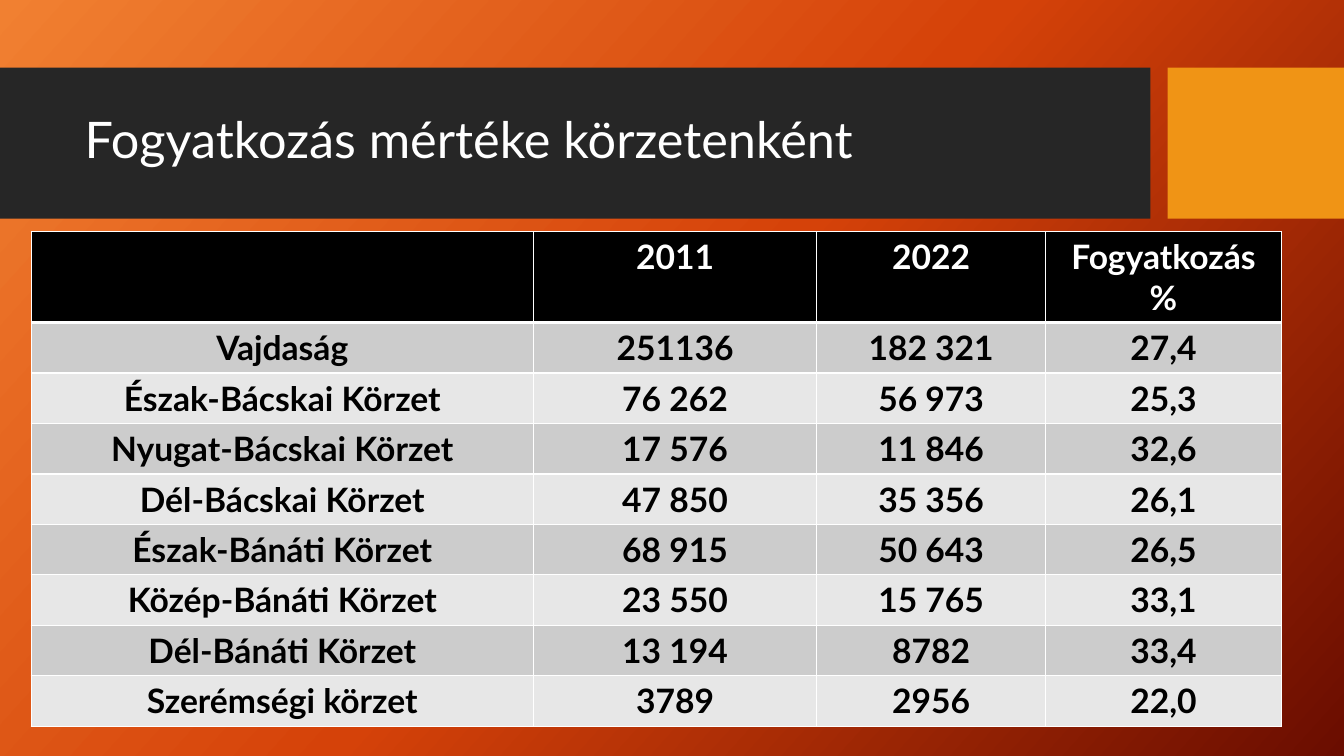
from dataclasses import dataclass
from lxml.etree import SubElement
from pptx import Presentation
from pptx.dml.color import RGBColor as RGB
from pptx.enum.shapes import MSO_SHAPE as Shape
from pptx.enum.text import MSO_ANCHOR as Anchor, PP_ALIGN as Align
from pptx.oxml.ns import qn
from pptx.util import Inches, Pt

TITLE = "Fogyatkozás mértéke körzetenként"
ROWS = [
    ("", "2011", "2022", "Fogyatkozás %"),
    ("Vajdaság", "251136", "182 321", "27,4"),
    ("Észak-Bácskai Körzet", "76 262", "56 973", "25,3"),
    ("Nyugat-Bácskai Körzet", "17 576", "11 846", "32,6"),
    ("Dél-Bácskai Körzet", "47 850", "35 356", "26,1"),
    ("Észak-Bánáti Körzet", "68 915", "50 643", "26,5"),
    ("Közép-Bánáti Körzet", "23 550", "15 765", "33,1"),
    ("Dél-Bánáti Körzet", "13 194", "8782", "33,4"),
    ("Szerémségi körzet", "3789", "2956", "22,0"),
]
WIDTHS = (4.98, 2.81, 2.27, 2.34)
HEAD, ROW = 0.9, 0.5


@dataclass(frozen=True)
class Theme:
    font: str = "Lato"
    title: int = 36
    cell: int = 24
    white: str = "FFFFFF"
    black: str = "000000"
    bar: str = "262626"
    accent: str = "F09415"
    bands: tuple = ("E7E7E7", "CCCCCC")
    back: tuple = ((0, "F18031"), (50, "D54209"), (100, "6A0D00"))


LOOK = Theme()


def color(fill, tone):
    fill.solid()
    fill.fore_color.rgb = RGB.from_string(tone)


def style(para, size, tone, bold=False):
    for run in para.runs:
        font = run.font
        font.name, font.size, font.bold = LOOK.font, Pt(size), bold
        font.color.rgb = RGB.from_string(tone)


def paint(slide):
    fill = slide.background.fill
    fill.gradient()
    fill.gradient_angle = 318
    stops = next(slide.element.iter(qn("a:gsLst")))
    for stop in list(stops):
        stops.remove(stop)
    for place, tone in LOOK.back:
        stop = SubElement(stops, qn("a:gs"), pos=str(place * 1000))
        SubElement(stop, qn("a:srgbClr"), val=tone)


def block(slide, left, width, tone):
    shape = slide.shapes.add_shape(
        Shape.RECTANGLE, Inches(left), Inches(0.67), Inches(width), Inches(1.5))
    shape.shadow.inherit = False
    color(shape.fill, tone)
    shape.line.fill.background()


def heading(slide):
    title = slide.shapes.title
    title.left, title.top = Inches(0.74), Inches(0.82)
    title.width, title.height = Inches(10.51), Inches(1.18)
    frame = title.text_frame
    frame.text = TITLE
    frame.word_wrap = True
    frame.vertical_anchor = Anchor.MIDDLE
    para = frame.paragraphs[0]
    para.alignment, para.line_spacing = Align.LEFT, 0.9
    style(para, LOOK.title, LOOK.white)
    slide.shapes._spTree.append(title._element)


def border(cell, thick):
    props = cell._tc.get_or_add_tcPr()
    for spot, side in enumerate("LRTB"):
        width = Pt(thick.get(side, 1))
        line = props.makeelement(qn(f"a:ln{side}"), {"w": str(width)})
        fill = SubElement(line, qn("a:solidFill"))
        SubElement(fill, qn("a:srgbClr"), val=LOOK.white)
        props.insert(spot, line)


def grid(slide):
    high = HEAD + ROW * (len(ROWS) - 1)
    table = slide.shapes.add_table(
        len(ROWS), len(WIDTHS), Inches(0.31), Inches(2.3),
        Inches(sum(WIDTHS)), Inches(high)).table
    for col, width in zip(table.columns, WIDTHS):
        col.width = Inches(width)
    for i, texts in enumerate(ROWS):
        table.rows[i].height = Inches(ROW if i else HEAD)
        for j, text in enumerate(texts):
            cell = table.cell(i, j)
            cell.text_frame.text = text
            para = cell.text_frame.paragraphs[0]
            para.alignment = Align.CENTER
            style(para, LOOK.cell, LOOK.black if i else LOOK.white, True)
            color(cell.fill, LOOK.bands[i % 2] if i else LOOK.black)
            border(cell, {0: {"B": 3}, 1: {"T": 3}}.get(i, {}))


def main():
    """Build the slide on population decline by district."""
    deck = Presentation()
    deck.slide_width, deck.slide_height = Inches(13.33), Inches(7.5)
    slide = deck.slides.add_slide(deck.slide_layouts[5])
    paint(slide)
    block(slide, 0, 11.41, LOOK.bar)
    block(slide, 11.58, 1.75, LOOK.accent)
    heading(slide)
    grid(slide)
    deck.save("out.pptx")


if __name__ == "__main__":
    main()
